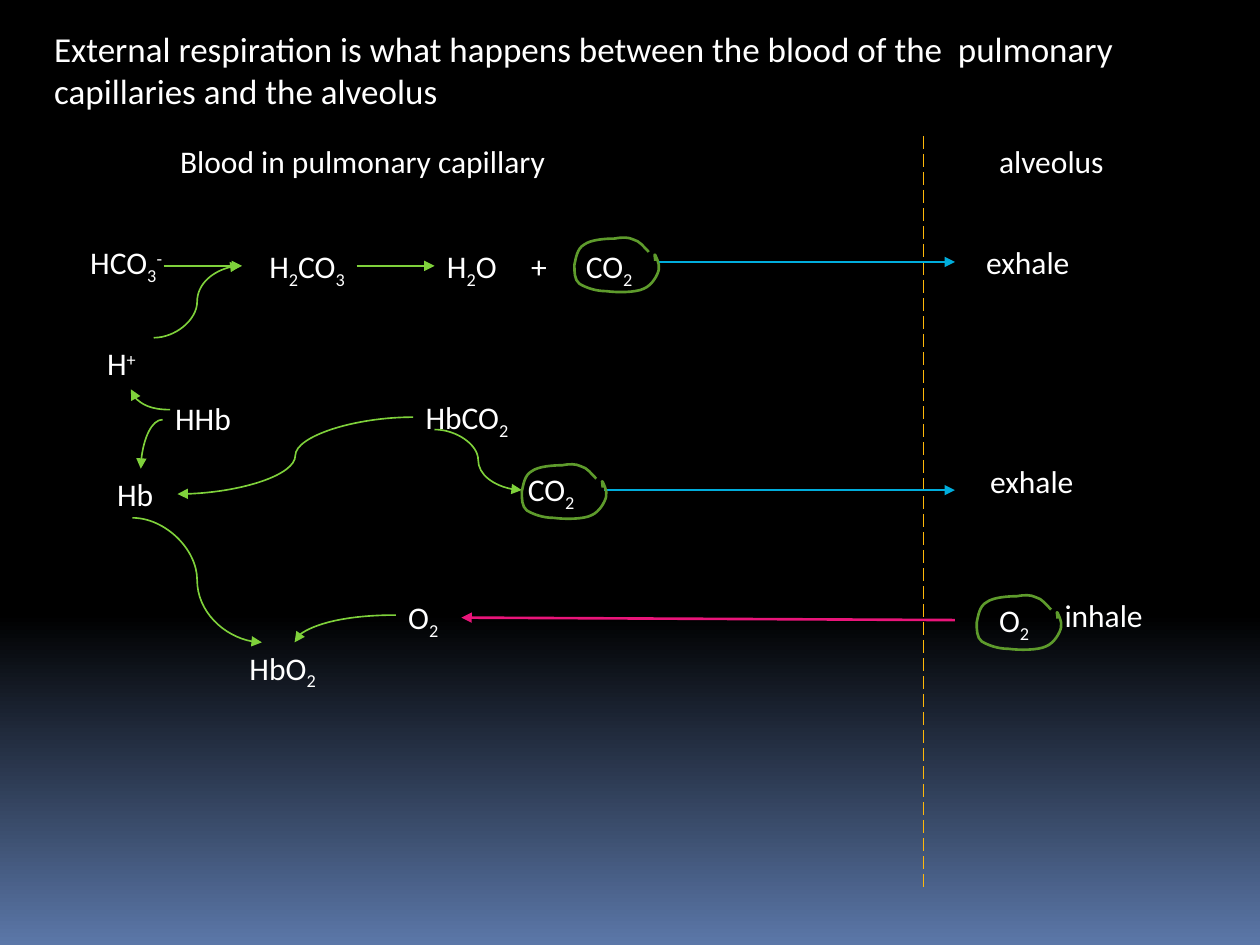
from copy import deepcopy

from lxml.etree import SubElement
from pptx import Presentation
from pptx.dml.color import RGBColor
from pptx.enum.dml import MSO_LINE
from pptx.enum.shapes import MSO_CONNECTOR
from pptx.enum.text import MSO_AUTO_SIZE
from pptx.oxml.ns import qn
from pptx.util import Cm, Pt

WHITE, GREEN, RING_GREEN = "FFFFFF", "7FD13B", "5E9B2C"
BLUE, PINK, AMBER = "00ADDC", "EA157A", "FEB80A"

# Content: background stops (position, colour)
BACKDROP = [(0, "000000"), (0.65, "000000"), (1, "5B77A8")]

TITLE = ("External respiration is what happens between the blood of the  "
         "pulmonary capillaries and the alveolus")

# Labels: runs ("_" lowers, "^" raises), left, top, width in cm
LABELS = [
    (["alveolus"], 19.89, 2.74, 4.01),
    (["Blood in pulmonary capillary"], 3.38, 2.74, 11.23),
    (["Hb"], 2.11, 9.45, 1.47),
    (["HbO", "_2"], 4.78, 12.95, 2.34),
    (["HbCO", "_2"], 8.33, 7.9, 2.54),
    (["HCO", "_3", "^-"], 1.57, 4.78, 2.54),
    (["H", "^+"], 1.91, 6.81, 1.47),
    (["H", "_2", "O"], 8.76, 4.85, 2.11),
    (["CO", "_2"], 11.56, 4.85, 1.73),
    (["H", "_2", "CO", "_3"], 5.18, 4.85, 2.59),
    (["+"], 10.46, 4.85, 0.64),
    (["exhale"], 19.63, 4.78, 3.61),
    (["CO", "_2"], 10.39, 9.35, 1.73),
    (["HHb"], 3.28, 7.92, 2.03),
    (["O", "_2"], 7.98, 11.94, 1.3),
    (["exhale"], 19.71, 9.19, 3.61),
    (["O", "_2"], 19.89, 11.99, 1.3),
    (["inhale"], 21.21, 11.89, 3.61),
]

MEMBRANE = (18.62, 2.74, 18.62, 17.98)

# Arrows: preset, start x, start y, end x, end y in cm, colour, width in pt
STRAIGHT, BEND, WAVE = "line", "curvedConnector2", "curvedConnector3"
ARROWS = [
    (STRAIGHT, (7.19, 5.36, 8.76, 5.36), GREEN, 0.94),
    (WAVE, (3.1, 6.81, 4.85, 5.36), GREEN, 0.94),
    (STRAIGHT, (3.3, 5.36, 4.88, 5.36), GREEN, 0.94),
    (STRAIGHT, (13.28, 5.28, 19.25, 5.28), BLUE, 0.94),
    (BEND, (3.28, 8.46, 2.84, 9.45), GREEN, 0.94),
    (BEND, (3.43, 8.26, 2.64, 7.85), GREEN, 0.94),
    (WAVE, (8.33, 8.41, 3.58, 9.96), GREEN, 0.94),
    (WAVE, (8.76, 8.66, 10.52, 9.88), GREEN, 0.94),
    (STRAIGHT, (19.25, 12.5, 9.3, 12.45), PINK, 1.5),
    (STRAIGHT, (12.17, 9.88, 19.25, 9.88), BLUE, 0.94),
    (WAVE, (2.67, 10.44, 5.28, 12.95), GREEN, 0.94),
    (BEND, (7.98, 12.4, 5.94, 12.95), GREEN, 0.94),
]

# Hand-drawn ring: start, then three points per curve, in cm from its corner
RING_START = (1.5, 0.3)
RING_CURVES = [
    [(1.4, 0.2), (1.32, 0.08), (1.19, 0.05)],
    [(1.09, 0), (0.97, 0), (0.81, 0.03)],
    [(0.64, 0.03), (0.33, 0.05), (0.2, 0.15)],
    [(0.05, 0.23), (0.03, 0.43), (0, 0.56)],
    [(0, 0.71), (0, 0.86), (0.1, 0.94)],
    [(0.23, 1.02), (0.43, 1.09), (0.64, 1.09)],
    [(0.86, 1.12), (1.24, 1.12), (1.4, 1.04)],
    [(1.57, 0.97), (1.68, 0.76), (1.7, 0.66)],
    [(1.73, 0.53), (1.63, 0.38), (1.63, 0.36)],
    [(1.6, 0.33), (1.63, 0.41), (1.63, 0.48)],
]
RING_CORNERS = [(11.58, 4.78), (19.69, 11.99), (10.52, 9.35)]

FRAME_FORMAT = {"word_wrap": True, "auto_size": MSO_AUTO_SIZE.SHAPE_TO_FIT_TEXT}
BASELINES = {"_": "-25000", "^": "30000"}


def rgb(color):
    return RGBColor.from_string(color)


def set_format(target, values):
    for attribute, value in values.items():
        setattr(target, attribute, value)


def paint_background(slide):
    fill = slide.background.fill
    fill.gradient()
    fill.gradient_angle = 270
    stop_list = slide.element.find(".//" + qn("a:gsLst"))
    while len(stop_list) < len(BACKDROP):
        stop_list.append(deepcopy(stop_list[-1]))
    for stop, (position, color) in zip(fill.gradient_stops, BACKDROP):
        stop.position = position
        stop.color.rgb = rgb(color)


def add_label(slide, parts, left, top, width, height=1.02, size=18):
    label = slide.shapes.add_textbox(Cm(left), Cm(top), Cm(width), Cm(height))
    set_format(label.text_frame, FRAME_FORMAT)
    paragraph = label.text_frame.paragraphs[0]
    for part in parts:
        run = paragraph.add_run()
        shifted = len(part) > 1 and part[0] in BASELINES
        run.text = part[1:] if shifted else part
        set_format(run.font, {"name": "Calibri", "size": Pt(size)})
        run.font.color.rgb = rgb(WHITE)
        if shifted:
            run.font._element.set("baseline", BASELINES[part[0]])


def add_path(slide, preset, ends, color, width):
    kind = MSO_CONNECTOR.STRAIGHT if preset == STRAIGHT else MSO_CONNECTOR.CURVE
    connector = slide.shapes.add_connector(kind, *map(Cm, ends))
    connector.line.color.rgb = rgb(color)
    connector.line.width = Pt(width)
    properties = connector._element.spPr
    properties.find(qn("a:prstGeom")).set("prst", preset)
    SubElement(properties, qn("a:effectLst"))
    return connector


def add_arrow(slide, *arrow):
    line = add_path(slide, *arrow).line
    SubElement(line._get_or_add_ln(), qn("a:tailEnd"), type="triangle")


def add_ring(slide, left, top):
    points = [(Cm(x), Cm(y)) for curve in RING_CURVES for x, y in curve]
    builder = slide.shapes.build_freeform(*map(Cm, RING_START))
    builder.add_line_segments(points, close=False)
    ring = builder.convert_to_shape(Cm(left), Cm(top))
    ring.shadow.inherit = False
    ring.fill.background()
    ring.line.color.rgb = rgb(RING_GREEN)
    ring.line.width = Pt(1.5)
    # Join each three straight segments into one Bézier curve
    outline = ring._element.find(".//" + qn("a:path"))
    segments = outline.findall(qn("a:lnTo"))
    for first in range(0, len(segments), 3):
        curve = SubElement(outline, qn("a:cubicBezTo"))
        for segment in segments[first:first + 3]:
            curve.append(segment[0])
            outline.remove(segment)


def main():
    presentation = Presentation()
    set_format(presentation, {"slide_width": Cm(25.4), "slide_height": Cm(19.05)})
    slide = presentation.slides.add_slide(presentation.slide_layouts[6])
    paint_background(slide)

    # Title, membrane and labels
    add_label(slide, [TITLE], 0.84, 0.43, 23.5, height=1.96, size=20)
    membrane = add_path(slide, STRAIGHT, MEMBRANE, AMBER, 0.94)
    membrane.line.dash_style = MSO_LINE.LONG_DASH
    for label in LABELS:
        add_label(slide, *label)

    # Reaction arrows and rings around the exchanged gases
    for arrow in ARROWS:
        add_arrow(slide, *arrow)
    for corner in RING_CORNERS:
        add_ring(slide, *corner)

    presentation.save("out.pptx")


if __name__ == "__main__":
    main()
